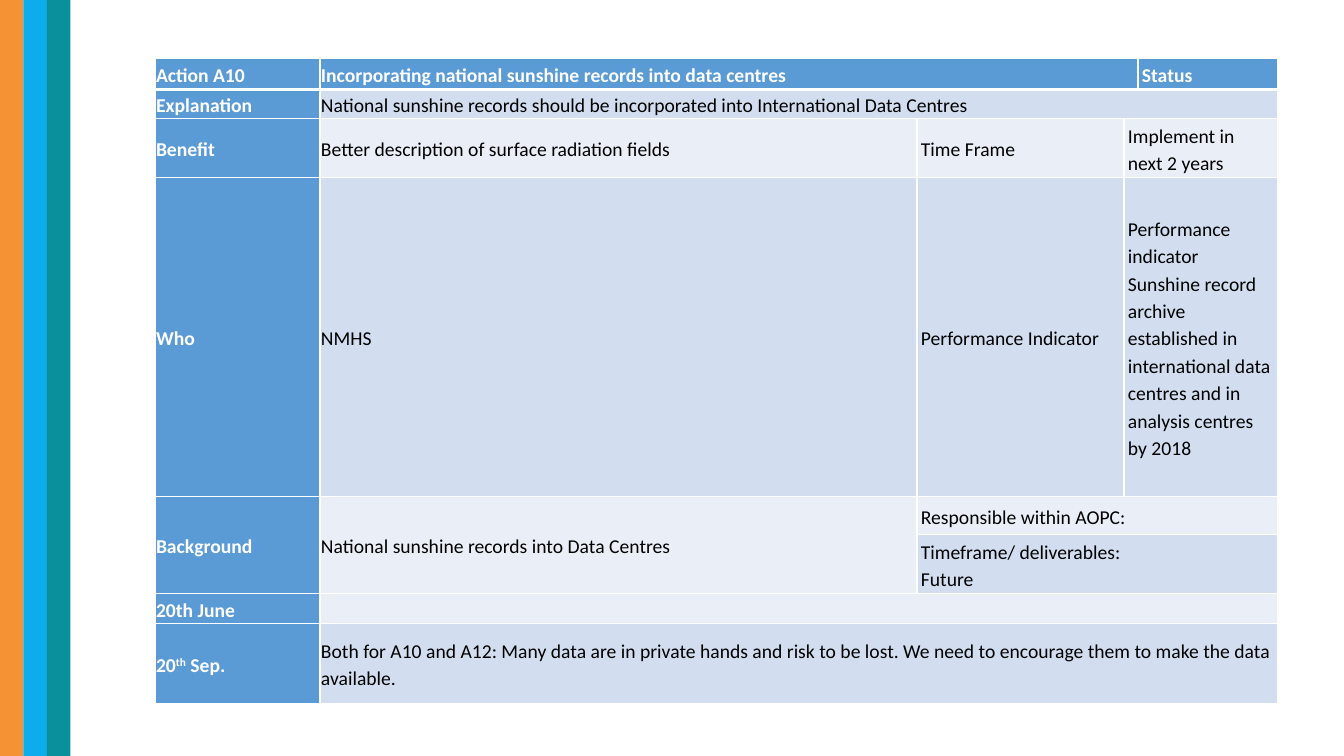
"""Build the Action A10 status slide: three side stripes and a merged table."""
from lxml.etree import SubElement
from pptx import Presentation
from pptx.dml.color import RGBColor as RGB
from pptx.enum.shapes import MSO_SHAPE as SHAPE
from pptx.enum.text import MSO_ANCHOR as ANCHOR
from pptx.oxml.ns import qn
from pptx.util import Pt

COLORS = {
    "orange": "F49234", "sky": "0CADEA", "teal": "0A8F9D", "head": "5B9BD5",
    "dark": "D2DEEF", "light": "EAEFF7", "white": "FFFFFF", "black": "000000",
}
STRIPES = ["orange", "sky", "teal"]
COL_WIDTHS = [165, 597, 207, 14, 140]
ROW_HEIGHTS = [31, 29, 59, 319, 38, 59, 30, 80]
TABLE_LEFT, TABLE_TOP = 155, 58

# row, column, rows spanned, columns spanned, fill, text
CELLS = [
    (0, 0, 1, 1, "head", "Action A10"),
    (0, 1, 1, 3, "head", "Incorporating national sunshine records into data centres"),
    (0, 4, 1, 1, "head", "Status"),
    (1, 0, 1, 1, "head", "Explanation"),
    (1, 1, 1, 4, "dark", "National sunshine records should be incorporated into "
                         "International Data Centres"),
    (2, 0, 1, 1, "head", "Benefit"),
    (2, 1, 1, 1, "light", "Better description of surface radiation fields"),
    (2, 2, 1, 1, "light", "Time Frame"),
    (2, 3, 1, 2, "light", "Implement in next 2 years"),
    (3, 0, 1, 1, "head", "Who"),
    (3, 1, 1, 1, "dark", "NMHS"),
    (3, 2, 1, 1, "dark", "Performance Indicator"),
    (3, 3, 1, 2, "dark", "Performance indicator\tSunshine record archive established in "
                         "international data centres and in analysis centres by 2018"),
    (4, 0, 2, 1, "head", "Background"),
    (4, 1, 2, 1, "light", "National sunshine records into Data Centres"),
    (4, 2, 1, 3, "light", "Responsible within AOPC:"),
    (5, 2, 1, 3, "dark", "Timeframe/ deliverables:\nFuture"),
    (6, 0, 1, 1, "head", "20th June"),
    (6, 1, 1, 4, "light", ""),
    (7, 0, 1, 1, "head", "20^th^ Sep."),
    (7, 1, 1, 4, "dark", "Both for A10 and A12: Many data are in private hands and risk to be "
                         "lost. We need to encourage them to make the data available."),
]


def px(n):
    return round(n * 914400 / 100.8)


def rgb(name):
    return RGB.from_string(COLORS[name])


def write(tf, text, size=14, color="black", bold=False, font="Calibri"):
    """Write lines of text; parts between ^ marks are superscript."""
    for i, line in enumerate(text.split("\n")):
        p = tf.add_paragraph() if i else tf.paragraphs[0]
        p.line_spacing = 1.15
        if not line:
            p._p.get_or_add_endParaRPr().set("sz", str(size * 100))
            continue
        for j, part in enumerate(line.split("^")):
            r = p.add_run()
            r.text = part
            r.font.name, r.font.size, r.font.bold = font, Pt(size), bold
            r.font.color.rgb = rgb(color)
            if j % 2:
                r.font._element.set("baseline", "30000")


def set_borders(cell, top, bottom):
    tc_pr = cell._tc.get_or_add_tcPr()
    widths = {"lnL": 1, "lnR": 1, "lnT": top, "lnB": bottom}
    for i, (side, width) in enumerate(widths.items()):
        ln = SubElement(tc_pr, qn("a:" + side), w=str(Pt(width)))
        fill = SubElement(ln, qn("a:solidFill"))
        SubElement(fill, qn("a:srgbClr"), val=COLORS["white"])
        tc_pr.insert(i, ln)


def add_stripes(s):
    for i, color in enumerate(STRIPES):
        left, right = px(i * 23.5), px((i + 1) * 23.5)
        sp = s.shapes.add_shape(SHAPE.RECTANGLE, left, 0, right - left, px(756))
        sp.shadow.inherit = False
        sp.fill.solid()
        sp.fill.fore_color.rgb = rgb(color)
        sp.line.fill.background()


def add_action_table(s):
    table = s.shapes.add_table(
        len(ROW_HEIGHTS), len(COL_WIDTHS), px(TABLE_LEFT), px(TABLE_TOP),
        px(sum(COL_WIDTHS)), px(sum(ROW_HEIGHTS))).table
    table.first_row = table.horz_banding = False
    for col, width in zip(table.columns, COL_WIDTHS):
        col.width = px(width)
    for row, height in zip(table.rows, ROW_HEIGHTS):
        row.height = px(height)
    for row, col, n_rows, n_cols, fill, text in CELLS:
        cell = table.cell(row, col)
        if n_rows * n_cols > 1:
            cell.merge(table.cell(row + n_rows - 1, col + n_cols - 1))
        side, edge = (1, 1) if col < 2 else (4, 2)
        cell.margin_left = cell.margin_right = px(side)
        cell.margin_top = cell.margin_bottom = px(edge)
        cell.vertical_anchor = ANCHOR.MIDDLE
        head = fill == "head"
        write(cell.text_frame, text, color="white" if head else "black", bold=head)
        for r in range(row, row + n_rows):
            for c in range(col, col + n_cols):
                part = table.cell(r, c)
                part.fill.solid()
                part.fill.fore_color.rgb = rgb(fill)
                set_borders(part, top=3 if r == 1 else 1, bottom=3 if r == 0 else 1)


def main():
    prs = Presentation()
    prs.slide_width, prs.slide_height = px(1344), px(756)
    s = prs.slides.add_slide(prs.slide_layouts[6])
    add_stripes(s)
    add_action_table(s)
    prs.save("out.pptx")


if __name__ == "__main__":
    main()
